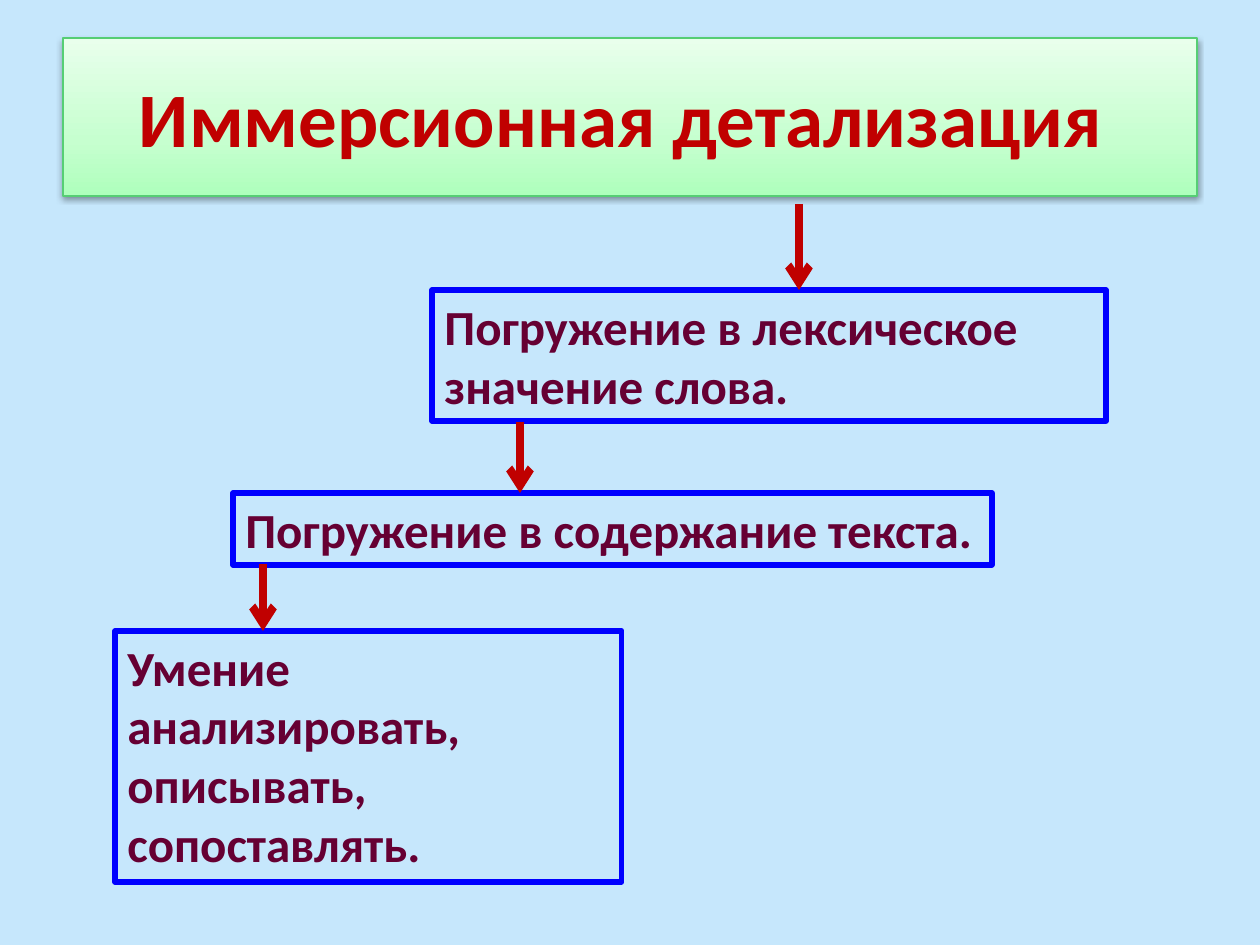
from dataclasses import dataclass

from lxml.etree import SubElement
from pptx import Presentation
from pptx.dml.color import RGBColor as RGB
from pptx.enum.shapes import MSO_CONNECTOR as CONN
from pptx.enum.text import MSO_ANCHOR as ANCHOR, MSO_AUTO_SIZE as FIT, PP_ALIGN as ALIGN
from pptx.oxml import parse_xml
from pptx.oxml.ns import nsdecls, qn
from pptx.util import Emu, Pt

PX_PER_INCH = 126


@dataclass(frozen=True)
class Theme:
    font: str = "Calibri"
    background: str = "C6E7FC"
    title: str = "C00000"
    title_edge: str = "56CE74"
    title_stops: tuple = ((0, "AEFFBC"), (35, "C6FFCF"), (100, "E9FFEC"))
    text: str = "660033"
    box_edge: str = "0000FF"
    arrow: str = "C00000"
    title_size: int = 44
    text_size: int = 28


@dataclass(frozen=True)
class Step:
    text: str
    left: int
    top: int
    width: int
    height: int
    wrap: bool = True


@dataclass(frozen=True)
class Arrow:
    x: int
    top: int
    bottom: int


THEME = Theme()
STEPS = (
    Step("Погружение в лексическое значение слова.", 432, 290, 674, 131),
    Step("Погружение в содержание текста.", 233, 493, 759, 72, wrap=False),
    Step("Умение анализировать, описывать, сопоставлять.", 115, 631, 507, 251),
)
ARROWS = (Arrow(799, 204, 290), Arrow(520, 422, 493), Arrow(263, 564, 631))


def px(n: int) -> Emu:
    return Emu(round(n * 914400 / PX_PER_INCH))


def add_run(p, text: str, size: int, color: str) -> None:
    r = p.add_run()
    r.text = text
    r.font.name = THEME.font
    r.font.size = Pt(size)
    r.font.bold = True
    r.font.color.rgb = RGB.from_string(color)


def set_line(line, color: str, width: float) -> None:
    line.color.rgb = RGB.from_string(color)
    line.width = Pt(width)


def draw_title(s, text: str) -> None:
    sp = s.shapes.title
    sp.left, sp.top, sp.width, sp.height = map(px, (63, 38, 1134, 158))
    # Three-stop gradient, darkest at the bottom
    stops = "".join(
        f'<a:gs pos="{pos * 1000}"><a:srgbClr val="{color}"/></a:gs>'
        for pos, color in THEME.title_stops
    )
    sp._element.spPr.append(parse_xml(
        f'<a:gradFill {nsdecls("a")} rotWithShape="1"><a:gsLst>{stops}</a:gsLst>'
        '<a:lin ang="16200000" scaled="0"/></a:gradFill>'))
    set_line(sp.line, THEME.title_edge, 0.75)
    # Soft shadow below
    sp._element.spPr.append(parse_xml(
        f'<a:effectLst {nsdecls("a")}><a:outerShdw blurRad="{Pt(3.1)}" '
        f'dist="{Pt(1.6)}" dir="5400000" rotWithShape="0"><a:srgbClr val="000000">'
        '<a:alpha val="38000"/></a:srgbClr></a:outerShdw></a:effectLst>'))
    tf = sp.text_frame
    tf.auto_size = FIT.NONE
    tf.vertical_anchor = ANCHOR.MIDDLE
    p = tf.paragraphs[0]
    p.alignment = ALIGN.CENTER
    add_run(p, text, THEME.title_size, THEME.title)


def draw_step(s, step: Step) -> None:
    sp = s.shapes.add_textbox(*map(px, (step.left, step.top, step.width, step.height)))
    set_line(sp.line, THEME.box_edge, 3)
    tf = sp.text_frame
    tf.word_wrap = step.wrap
    tf.auto_size = FIT.SHAPE_TO_FIT_TEXT
    add_run(tf.paragraphs[0], step.text, THEME.text_size, THEME.text)


def draw_arrow(s, arrow: Arrow) -> None:
    x = px(arrow.x)
    c = s.shapes.add_connector(CONN.STRAIGHT, x, px(arrow.top), x, px(arrow.bottom))
    set_line(c.line, THEME.arrow, 4.5)
    SubElement(c.line._get_or_add_ln(), qn("a:tailEnd"), type="arrow")
    SubElement(c._element.spPr, qn("a:effectLst"))


def main() -> None:
    prs = Presentation()
    prs.slide_width, prs.slide_height = px(1260), px(945)
    s = prs.slides.add_slide(prs.slide_layouts[5])
    fill = s.background.fill
    fill.solid()
    fill.fore_color.rgb = RGB.from_string(THEME.background)

    # Heading, then the staircase of steps and the arrows between them
    draw_title(s, "Иммерсионная детализация ")
    for step in STEPS:
        draw_step(s, step)
    for arrow in ARROWS:
        draw_arrow(s, arrow)
    prs.save("out.pptx")


if __name__ == "__main__":
    main()
